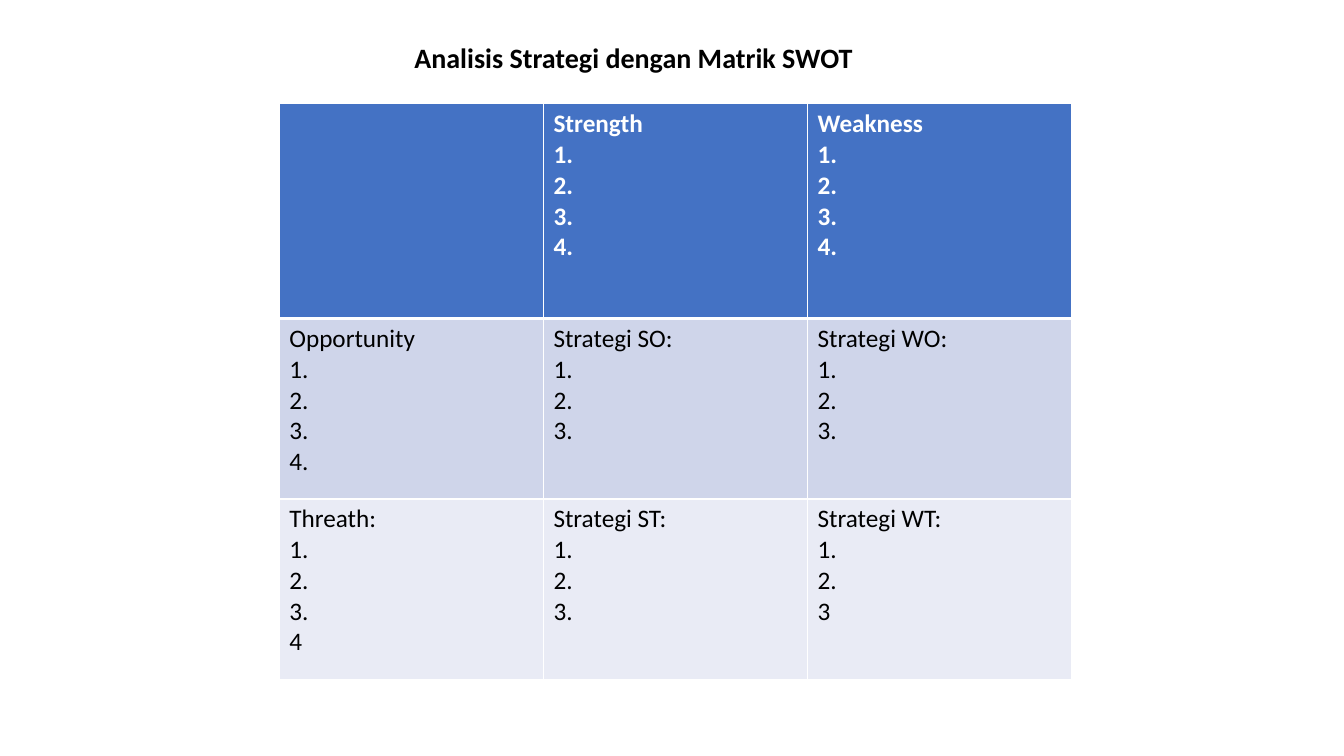
from lxml import etree
from pptx import Presentation
from pptx.dml.color import RGBColor
from pptx.enum import text
from pptx.oxml.ns import qn
from pptx.util import Inches, Pt

HUES = {"head": "4472C4", "odd": "CFD5EA", "even": "E9EBF5",
        "light": "FFFFFF", "dark": "000000"}
WIDE, HIGH = 13.33, 7.5

FOUR = ["1.", "2.", "3.", "4."]
THREE = FOUR[:3]
# Each row: fill, text colour, bold, height, cells
ROWS = [
    ("head", "light", True, 2.13,
     [[], ["Strength", *FOUR], ["Weakness", *FOUR]]),
    ("odd", "dark", False, 1.79,
     [["Opportunity", *FOUR], ["Strategi SO:", *THREE],
      ["Strategi WO:", *THREE]]),
    ("even", "dark", False, 1.79,
     [["Threath:", *THREE, "4"], ["Strategi ST:", *THREE],
      ["Strategi WT:", "1.", "2.", "3"]]),
]


def style(para, hue, size, bold):
    for name, value in {"name": "Calibri", "size": Pt(size), "bold": bold}.items():
        setattr(para.font, name, value)
    para.font.color.rgb = RGBColor.from_string(HUES[hue])


def edge(cell, side, width):
    line = etree.SubElement(cell._tc.get_or_add_tcPr(), qn("a:ln" + side),
                            w=str(Pt(width)))
    fill = etree.SubElement(line, qn("a:solidFill"))
    etree.SubElement(fill, qn("a:srgbClr"), val=HUES["light"])


def add_title(slide, box):
    title = slide.shapes.title
    for name, value in zip(("left", "top", "width", "height"), box):
        setattr(title, name, Inches(value))
    frame = title.text_frame
    frame.text = "Analisis Strategi dengan Matrik SWOT"
    form = {"word_wrap": True, "vertical_anchor": text.MSO_ANCHOR.TOP,
            "auto_size": text.MSO_AUTO_SIZE.SHAPE_TO_FIT_TEXT}
    for name, value in form.items():
        setattr(frame, name, value)
    para = frame.paragraphs[0]
    para.alignment = text.PP_ALIGN.CENTER
    style(para, "dark", 20, True)


def add_matrix(slide, box):
    count = len(ROWS[0][-1])
    grid = slide.shapes.add_table(len(ROWS), count, *map(Inches, box)).table
    for col in grid.columns:
        col.width = Inches(box[2] / count)
    for r, (fill, hue, bold, height, cells) in enumerate(ROWS):
        grid.rows[r].height = Inches(height)
        for c, lines in enumerate(cells):
            cell = grid.cell(r, c)
            # White rules, heavier under the header row
            for side in "LRTB":
                heavy = (r, side) in ((0, "B"), (1, "T"))
                edge(cell, side, 3 if heavy else 1)
            cell.fill.solid()
            cell.fill.fore_color.rgb = RGBColor.from_string(HUES[fill])
            cell.text_frame.text = "\n".join(lines)
            for para in cell.text_frame.paragraphs:
                style(para, hue, 18, bold)


def main():
    deck = Presentation()
    deck.slide_width, deck.slide_height = Inches(WIDE), Inches(HIGH)
    slide = deck.slides.add_slide(deck.slide_layouts[5])
    add_matrix(slide, (2.77, 1.03, 7.86, 5.71))
    add_title(slide, (3.02, 0.35, 6.53, 0.44))
    deck.save("out.pptx")


if __name__ == "__main__":
    main()
